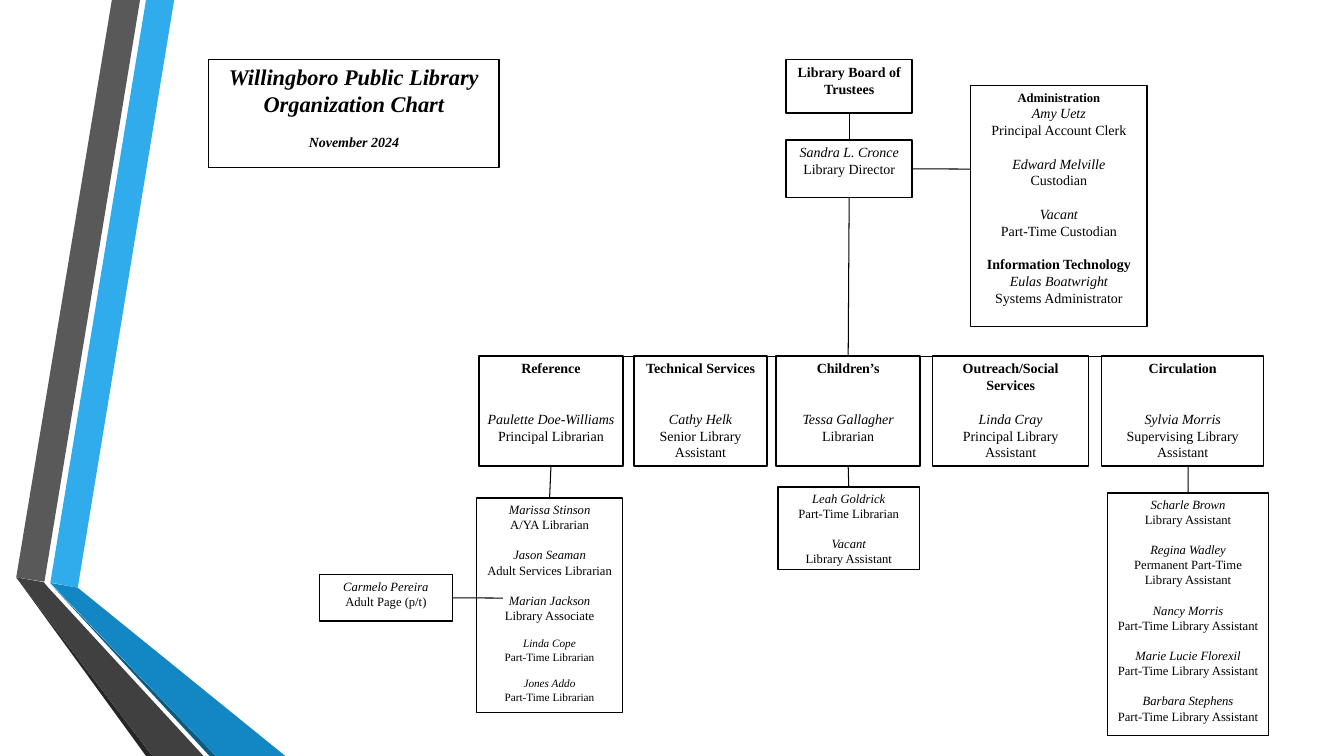
from lxml import etree
from pptx import Presentation
from pptx import util as u
from pptx.dml.color import RGBColor
from pptx.enum import shapes, text
from pptx.oxml import ns

BLACK = RGBColor(0x00, 0x00, 0x00)
LIGHT_BLUE = RGBColor(0x30, 0xAC, 0xEC)
MID_BLUE = RGBColor(0x12, 0x87, 0xC3)
DARK_BLUE = RGBColor(0x0C, 0x5A, 0x82)
GREY = RGBColor(0x59, 0x59, 0x59)
DARK_GREY = RGBColor(0x40, 0x40, 0x40)
DEEP_GREY = RGBColor(0x26, 0x26, 0x26)

FONT = "Times New Roman"
LINE_HEIGHT = 1.2
TOP, LEFT, BOTTOM, RIGHT = range(4)
SLIDE_BOX = (0, 0, 33.87, 19.05)

# Department row: name -> (left, width, heading lines, head of department)
ROW_TOP, ROW_HEIGHT = 8.97, 2.77
DEPARTMENTS = {
    "reference": (12.07, 3.63, ["*Reference"],
                  ["_Paulette Doe-Williams", "Principal Librarian"]),
    "technical": (15.98, 3.35, ["*Technical Services"],
                  ["_Cathy Helk", "Senior Library", "Assistant"]),
    "children": (19.56, 3.63, ["*Children’s"], ["_Tessa Gallagher", "Librarian"]),
    "outreach": (23.5, 3.94, ["*Outreach/Social", "*Services"],
                 ["_Linda Cray", "Principal Library", "Assistant"]),
    "circulation": (27.76, 4.09, ["*Circulation"],
                    ["_Sylvia Morris", "Supervising Library", "Assistant"]),
}

# Groups are (size, blank lines above, lines); * marks bold and _ italic
TITLE = [(16, 0, ["*_Willingboro Public Library", "*_Organization Chart"]),
         (10, 1, ["*_November 2024"])]
BOARD = [(10, 0, ["*Library Board of Trustees"])]
DIRECTOR = [(10, 0, ["_Sandra L. Cronce", "Library Director"])]
ADMINISTRATION = [
    (9, 0, ["*Administration"]),
    (10, 0, ["_Amy Uetz", "Principal Account Clerk"]),
    (10, 1, ["_Edward Melville", "Custodian"]),
    (10, 1, ["_Vacant", "Part-Time Custodian"]),
    (10, 1, ["*Information Technology", "_Eulas Boatwright", "Systems Administrator"]),
]
REFERENCE_STAFF = [
    (9, 0, ["_Marissa Stinson", "A/YA Librarian"]),
    (9, 1, ["_Jason Seaman", "Adult Services Librarian"]),
    (9, 1, ["_Marian Jackson", "Library Associate"]),
    (8, 1, ["_Linda Cope", "Part-Time Librarian"]),
    (8, 1, ["_Jones Addo", "Part-Time Librarian"]),
]
PAGE = [(9, 0, ["_Carmelo Pereira", "Adult Page (p/t)"])]
CHILDREN_STAFF = [(9, 0, ["_Leah Goldrick", "Part-Time Librarian"]),
                  (9, 1, ["_Vacant", "Library Assistant"])]
CIRCULATION_STAFF = [
    (9, 0, ["_Scharle Brown", "Library Assistant"]),
    (9, 1, ["_Regina Wadley", "Permanent Part-Time", "Library Assistant"]),
    (9, 1, ["_Nancy Morris", "Part-Time Library Assistant"]),
    (9, 1, ["_Marie Lucie Florexil", "Part-Time Library Assistant"]),
    (9, 1, ["_Barbara Stephens", "Part-Time Library Assistant"]),
]


def set_all(target, values):
    for name, value in values.items():
        setattr(target, name, value)


def add_ribbons(slide, box):
    """Folded ribbons along the left edge of the box."""
    left, top, _, height = box
    end = height
    ribbons = [
        (LIGHT_BLUE, [(1.27, 14.68), (1.96, 14.81), (4.39, 0), (3.68, 0)]),
        (GREY, [(3.53, 0), (2.82, 0), (0.41, 14.55), (1.12, 14.66)]),
        (DEEP_GREY, [(0.41, 14.55), (3.68, end), (3.84, end)]),
        (DARK_BLUE, [(1.27, 14.71), (5.28, end), (5.44, end)]),
        (MID_BLUE, [(1.27, 14.69), (5.44, end), (7.19, end), (1.96, 14.81)]),
        (DARK_GREY, [(5.13, end), (1.22, 14.81), (1.1, 14.67), (0.41, 14.55),
                     (3.84, end)]),
    ]
    for color, corners in ribbons:
        points = [(u.Cm(left + x), u.Cm(top + y)) for x, y in corners]
        builder = slide.shapes.build_freeform(*points[0])
        builder.add_line_segments(points[1:], close=True)
        ribbon = builder.convert_to_shape()
        ribbon.shadow.inherit = False
        ribbon.fill.solid()
        ribbon.fill.fore_color.rgb = color
        ribbon.line.fill.background()


def add_box(slide, box, groups):
    """Outlined box holding centred groups of lines."""
    shape = slide.shapes.add_shape(shapes.MSO_SHAPE.RECTANGLE, *map(u.Cm, box))
    shape.shadow.inherit = False
    shape.fill.background()
    shape.line.color.rgb = BLACK
    shape.line.width = u.Pt(1)
    frame = shape.text_frame
    margins = {f"margin_{side}": u.Cm(0.1) for side in ("left", "top", "right", "bottom")}
    set_all(frame, {"word_wrap": True, "vertical_anchor": text.MSO_ANCHOR.TOP, **margins})

    paragraph = None
    for size, blank_lines, lines in groups:
        for index, line in enumerate(lines):
            paragraph = frame.add_paragraph() if paragraph else frame.paragraphs[0]
            gap = blank_lines if index == 0 else 0
            set_all(paragraph, {
                "alignment": text.PP_ALIGN.CENTER,
                "line_spacing": u.Pt(size * LINE_HEIGHT),
                "space_before": u.Pt(size * LINE_HEIGHT * gap),
            })
            run = paragraph.add_run()
            run.text = line.lstrip("*_")
            set_all(run.font, {"name": FONT, "size": u.Pt(size),
                               "bold": "*" in line, "italic": "_" in line})
            run.font.color.rgb = BLACK
    return shape


def add_line(slide, start=(0, 0), end=(0, 0), begin_at=None, end_at=None):
    """Thin line; begin_at and end_at are (shape, side) pairs to join."""
    line = slide.shapes.add_connector(shapes.MSO_CONNECTOR.STRAIGHT,
                                      *map(u.Cm, (*start, *end)))
    if begin_at:
        line.begin_connect(*begin_at)
    if end_at:
        line.end_connect(*end_at)
    line.line.color.rgb = BLACK
    line.line.width = u.Pt(0.75)
    etree.SubElement(line._element.spPr, ns.qn("a:effectLst"))


def add_leadership(slide, box):
    """Board, director and administration; returns the director's box."""
    left, top, width, _ = box
    board = add_box(slide, (left, top, 3.18, 1.35), BOARD)
    director = add_box(slide, (left, top + 2.03, 3.18, 1.45), DIRECTOR)
    admin_left = left + width - 4.45
    add_box(slide, (admin_left, top + 0.66, 4.45, 6.07), ADMINISTRATION)
    add_line(slide, begin_at=(board, BOTTOM), end_at=(director, TOP))
    add_line(slide, end=(admin_left, top + 2.76), begin_at=(director, RIGHT))
    return director


def add_departments(slide, top, height):
    """Row of departments joined side by side."""
    boxes, previous_right = {}, None
    for name, (left, width, heading, head) in DEPARTMENTS.items():
        blank_lines = 3 - len(heading)
        boxes[name] = add_box(slide, (left, top, width, height),
                              [(10, 0, heading), (10, blank_lines, head)])
        if previous_right:
            add_line(slide, (previous_right, top + 0.02), (left, top + 0.02))
        previous_right = left + width
    return boxes


def add_staff(slide, departments):
    """Staff lists below their departments."""
    reference = add_box(slide, (12.01, 12.55, 3.68, 5.41), REFERENCE_STAFF)
    children = add_box(slide, (19.61, 12.27, 3.56, 2.08), CHILDREN_STAFF)
    circulation = add_box(slide, (27.91, 12.42, 4.06, 6.12), CIRCULATION_STAFF)
    page = add_box(slide, (8.05, 14.48, 3.35, 1.17), PAGE)
    for name, staff in (("reference", reference), ("children", children)):
        add_line(slide, begin_at=(departments[name], BOTTOM), end_at=(staff, TOP))
    add_line(slide, start=(29.94, ROW_TOP + ROW_HEIGHT), end_at=(circulation, TOP))
    add_line(slide, end=(12.67, 15.07), begin_at=(page, RIGHT))


def main():
    presentation = Presentation()
    presentation.slide_width, presentation.slide_height = map(u.Cm, SLIDE_BOX[2:])
    slide = presentation.slides.add_slide(presentation.slide_layouts[6])
    add_ribbons(slide, SLIDE_BOX)
    add_box(slide, (5.26, 1.5, 7.32, 2.72), TITLE)
    director = add_leadership(slide, (19.81, 1.5, 9.1, 6.73))
    departments = add_departments(slide, ROW_TOP, ROW_HEIGHT)
    add_line(slide, begin_at=(director, BOTTOM), end_at=(departments["children"], TOP))
    add_staff(slide, departments)
    presentation.save("out.pptx")


if __name__ == "__main__":
    main()
